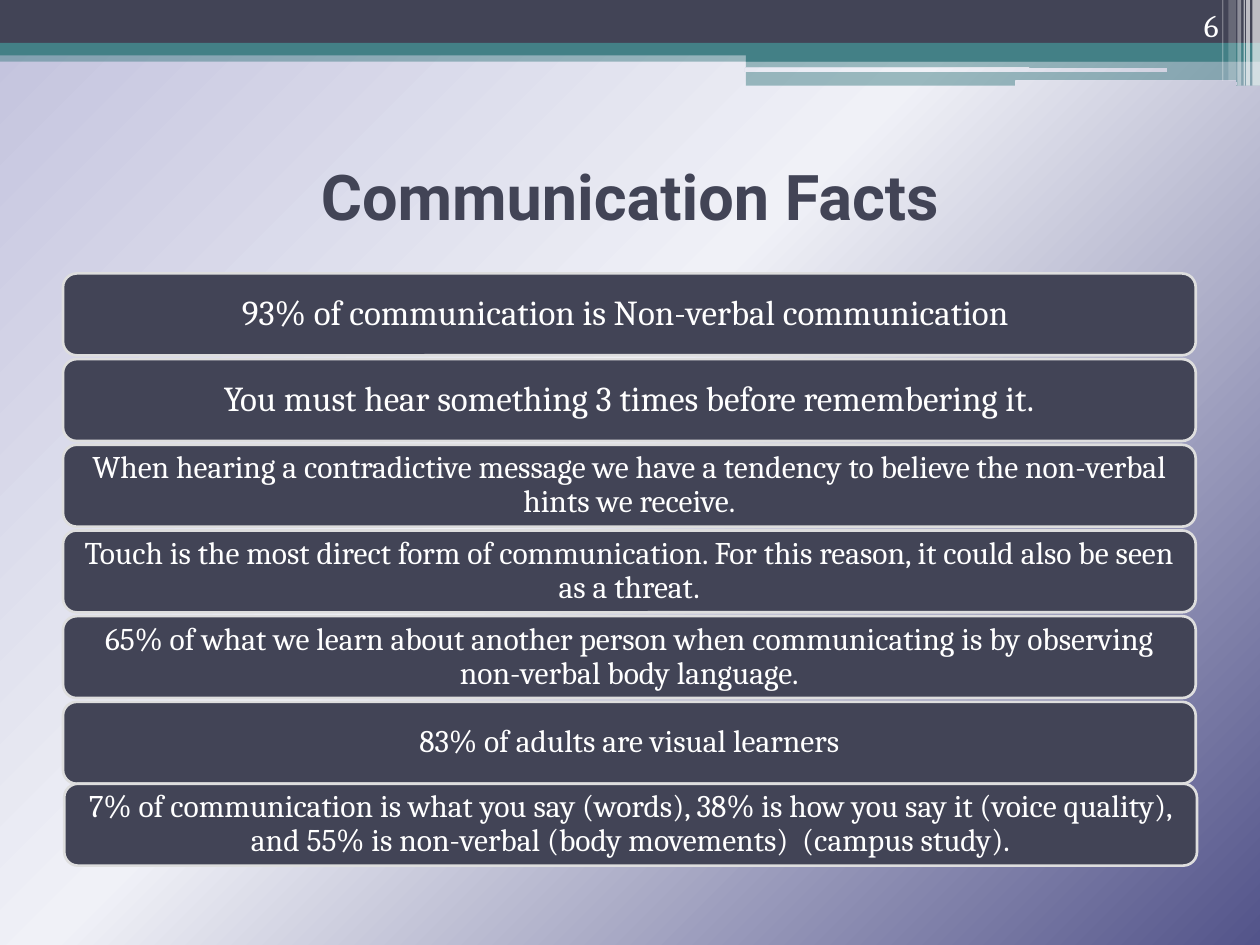
from lxml import etree
from pptx import Presentation
from pptx.dml.color import RGBColor
from pptx.enum.shapes import MSO_SHAPE as Shape
from pptx.enum.text import MSO_ANCHOR as Anchor, PP_ALIGN as Align
from pptx.oxml.ns import qn
from pptx.util import Inches, Pt

SLATE = RGBColor(0x42, 0x44, 0x56)
TEAL = RGBColor(0x43, 0x80, 0x86)
WHITE = RGBColor(0xFF, 0xFF, 0xFF)
SILVER = RGBColor(0xDE, 0xDE, 0xDE)
INDIGO = RGBColor(0x53, 0x54, 0x8A)
MIST = RGBColor(0xF0, 0xF1, 0xF7)
LAVENDER = RGBColor(0xC2, 0xC2, 0xDD)

# Gradient stops: position, colour, opacity (all in percent)
GLOW = [(0, INDIGO, 19), (55, MIST, 100), (100, LAVENDER, 100)]

# Header bars: left, top, width, height, colour, opacity
HEADER_BARS = [
    (0, 0.4, 10, 0.09, TEAL, 50),
    (0, 0, 10, 0.34, SLATE, 100),
    (0, 0.34, 10, 0.1, TEAL, 100),
    (5.92, 0.39, 4.08, 0.1, TEAL, 100),
    (5.92, 0.48, 4.08, 0.2, TEAL, 50),
]
GLOW_BARS = [(5.91, 0.54, 3.35, 0.03), (8.06, 0.64, 1.75, 0.04)]
# Corner stripes: left, width, height, opacity
CORNER_STRIPES = [
    (9.94, 0.06, 0.68, 65), (9.89, 0.03, 0.68, 65), (9.87, 0.01, 0.68, 60),
    (9.82, 0.03, 0.68, 40), (9.75, 0.06, 0.64, 20), (9.7, 0.01, 0.64, 30),
]

# Facts with their text size
FACTS = [
    ("93% of communication is Non-verbal communication ", 20),
    ("You must hear something 3 times before remembering it.", 20),
    ("When hearing a contradictive message we have a tendency to believe "
     "the non-verbal hints we receive.", 18),
    ("Touch is the most direct form of communication. For this reason, "
     "it could also be seen as a threat.", 18),
    ("65% of what we learn about another person when communicating is by "
     "observing non-verbal body language.", 18),
    ("83% of adults are visual learners", 18),
    ("7% of communication is what you say (words), 38% is how you say it "
     "(voice quality), and 55% is non-verbal (body movements)  (campus study).", 18),
]
FACT_TOP, FACT_PITCH = 2.17, 0.68


def write(shape, text, size, color, font="Cambria", bold=False, align=Align.CENTER,
          anchor=Anchor.MIDDLE, insets=(0.1, 0.05), spacing=None):
    frame = shape.text_frame
    frame.word_wrap = True
    frame.vertical_anchor = anchor
    frame.margin_left = frame.margin_right = Inches(insets[0])
    frame.margin_top = frame.margin_bottom = Inches(insets[1])
    paragraph = frame.paragraphs[0]
    paragraph.alignment = align
    paragraph.line_spacing = spacing
    run = paragraph.add_run()
    run.text = text
    run.font.name, run.font.size, run.font.bold = font, Pt(size), bold
    run.font.color.rgb = color


def set_opacity(color_element, percent):
    if percent < 100:
        etree.SubElement(color_element, qn("a:alpha"), val=str(percent * 1000))


def radiate(fill, parent):
    """Fill with the glow, spreading from the bottom right corner."""
    fill.gradient()
    gradient = parent.find(".//" + qn("a:gradFill"))
    for child in list(gradient):
        gradient.remove(child)
    stops = etree.SubElement(gradient, qn("a:gsLst"))
    for position, color, opacity in GLOW:
        stop = etree.SubElement(stops, qn("a:gs"), pos=str(position * 1000))
        set_opacity(etree.SubElement(stop, qn("a:srgbClr"), val=str(color)), opacity)
    circle = etree.SubElement(gradient, qn("a:path"), attrib={"path": "circle"})
    etree.SubElement(circle, qn("a:fillToRect"), l="100000", t="100000", r="0", b="0")


class FactSlide:
    def __init__(self, deck):
        self.slide = deck.slides.add_slide(deck.slide_layouts[6])
        radiate(self.slide.background.fill, self.slide.element)

    def outline(self, kind, box):
        shape = self.slide.shapes.add_shape(kind, *map(Inches, box))
        shape.shadow.inherit = False
        shape.line.fill.background()
        return shape

    def bar(self, box, color, opacity):
        bar = self.outline(Shape.RECTANGLE, box)
        bar.fill.solid()
        bar.fill.fore_color.rgb = color
        set_opacity(bar.element.spPr.find(".//" + qn("a:srgbClr")), opacity)

    def glow_bar(self, box):
        """A bar that shows the slide background through the header."""
        bar = self.outline(Shape.ROUNDED_RECTANGLE, box)
        bar.element.set("useBgFill", "1")

    def fact(self, box, text, size):
        card = self.outline(Shape.ROUNDED_RECTANGLE, box)
        card.fill.solid()
        card.fill.fore_color.rgb = SLATE
        card.line.color.rgb = SILVER
        card.line.width = Pt(1.5)
        write(card, text, size, WHITE, insets=(0.04, 0.01), spacing=0.9)

    def label(self, box, text, size, color, **style):
        write(self.slide.shapes.add_textbox(*map(Inches, box)), text, size, color, **style)


def main():
    deck = Presentation()
    deck.slide_width, deck.slide_height = Inches(10), Inches(7.5)
    page = FactSlide(deck)

    # Header band and corner stripes
    for *box, color, opacity in HEADER_BARS:
        page.bar(box, color, opacity)
    for box in GLOW_BARS:
        page.glow_bar(box)
    for left, width, height, opacity in CORNER_STRIPES:
        page.bar((left, 0, width, height), WHITE, opacity)

    # Title
    page.label((0.5, 1.25, 9, 1.17), "Communication Facts", 36, SLATE, font="Roboto",
               bold=True, anchor=Anchor.TOP, insets=(0.1, 0))

    # Stack of facts; the last one sits slightly off the rhythm
    for index, (text, size) in enumerate(FACTS):
        left, top = 0.5, FACT_TOP + index * FACT_PITCH
        if index == len(FACTS) - 1:
            left, top = 0.51, 6.22
        page.fact((left, top, 8.99, 0.65), text, size)

    # Page number
    page.label((8.94, 0, 0.83, 0.4), "6", 18, WHITE, align=Align.RIGHT, anchor=Anchor.BOTTOM)

    deck.save("out.pptx")


if __name__ == "__main__":
    main()
